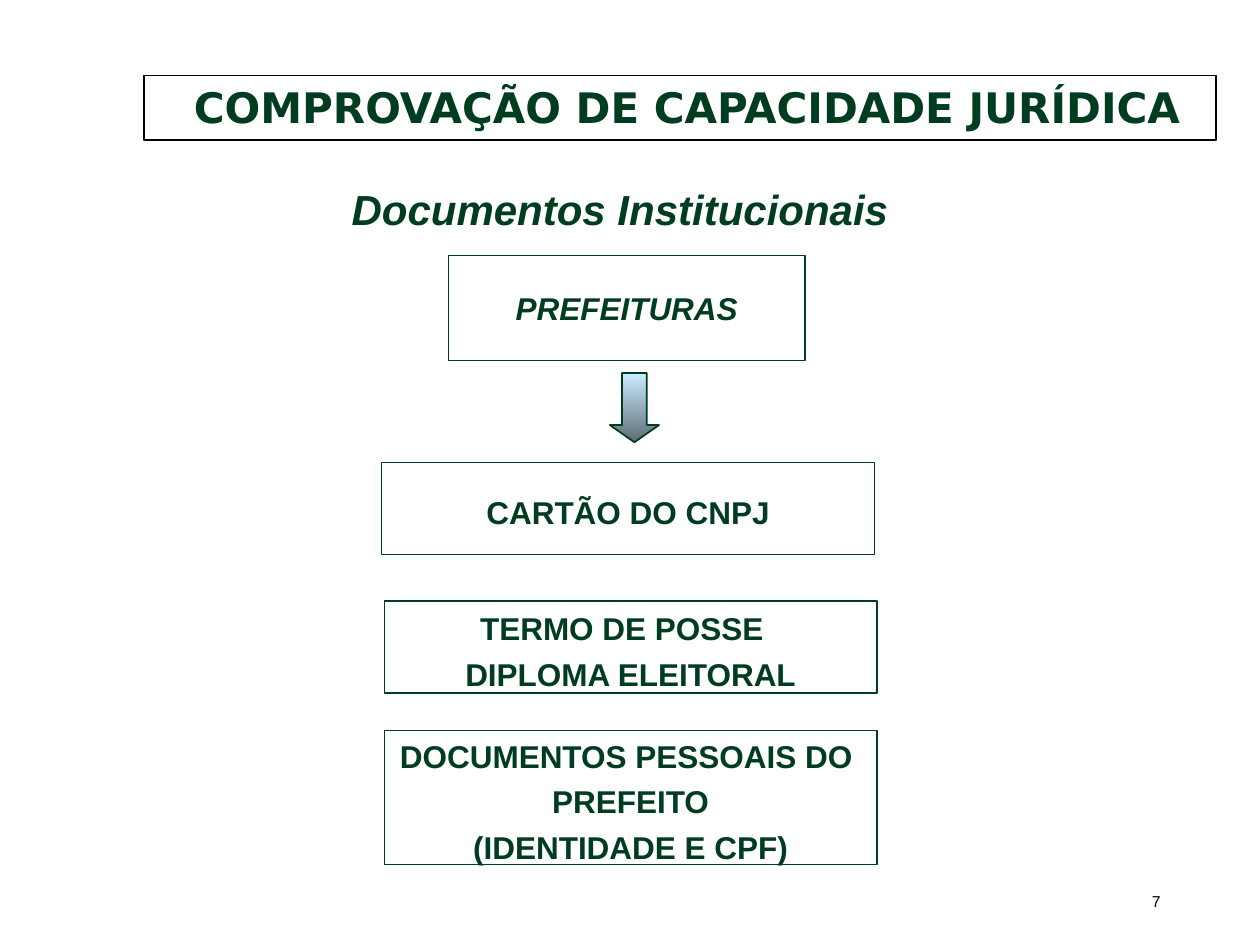
from pptx import Presentation
from pptx.dml.color import RGBColor
from pptx.enum.shapes import MSO_SHAPE
from pptx.enum.text import MSO_ANCHOR, PP_ALIGN
from pptx.util import Inches, Pt

GREEN = RGBColor(0x00, 0x3C, 0x20)
BLACK = RGBColor(0x00, 0x00, 0x00)
SKY = RGBColor(0xCC, 0xEC, 0xFF)
SLATE = RGBColor(0x5E, 0x6D, 0x76)

deck = Presentation()
deck.slide_width = Inches(10)
deck.slide_height = Inches(7.5)
slide = deck.slides.add_slide(deck.slide_layouts[6])
col = deck.slide_width / 100
row = deck.slide_height / 75


def place(kind, left, top, width, height, line=None, weight=0.75):
    area = [round(n) for n in (left * col, top * row, width * col, height * row)]
    if kind is None:
        return slide.shapes.add_textbox(*area)
    shape = slide.shapes.add_shape(kind, *area)
    shape.shadow.inherit = False
    shape.fill.background()
    shape.line.color.rgb = line
    shape.line.width = Pt(weight)
    return shape


def write(shape, text, size, color=GREEN, face="Arial", bold=True, slant=False,
          align=PP_ALIGN.CENTER, space=None, wrap=False):
    frame = shape.text_frame
    frame.text = text
    frame.word_wrap = wrap
    frame.vertical_anchor = MSO_ANCHOR.MIDDLE
    for para in frame.paragraphs:
        para.alignment = align
        para.line_spacing = space
        for run in para.runs:
            font = run.font
            font.size = Pt(size)
            font.name = face
            font.bold = bold
            font.italic = slant
            font.color.rgb = color


page = place(None, 70.6, 69.5, 22.5, 4)
write(page, "7", 9, BLACK, bold=False, align=PP_ALIGN.RIGHT, wrap=True)

title = place(MSO_SHAPE.RECTANGLE, 11.4, 6, 85.1, 5.1, BLACK, 1)
write(title, " COMPROVAÇÃO DE CAPACIDADE JURÍDICA", 24, face="DejaVu Sans", wrap=True)
title.text_frame.vertical_anchor = MSO_ANCHOR.TOP

head = place(None, 21.3, 13.6, 55.8, 6)
write(head, "Documentos Institucionais", 24, slant=True)

town = place(MSO_SHAPE.RECTANGLE, 35.6, 20.3, 28.3, 8.3, GREEN)
write(town, "PREFEITURAS", 18, slant=True)

arrow = place(MSO_SHAPE.DOWN_ARROW, 48.4, 29.6, 3.9, 5.5, GREEN, 1)
arrow.adjustments[0] = 0.5
arrow.adjustments[1] = 0.35
arrow.fill.gradient()
arrow.fill.gradient_angle = 270
for stop, color in zip(arrow.fill.gradient_stops, (SKY, SLATE)):
    stop.color.rgb = color

papers = [
    (30.3, 36.7, 7.3, "CARTÃO DO CNPJ"),
    (30.5, 47.7, 7.3, "TERMO DE POSSE  \nDIPLOMA ELEITORAL"),
    (30.5, 58, 10.6, "DOCUMENTOS PESSOAIS DO \nPREFEITO\n(IDENTIDADE E CPF)"),
]
for left, top, height, text in papers:
    box = place(MSO_SHAPE.RECTANGLE, left, top, 39.1, height, GREEN)
    write(box, text, 18, space=1.2)

deck.save("out.pptx")
